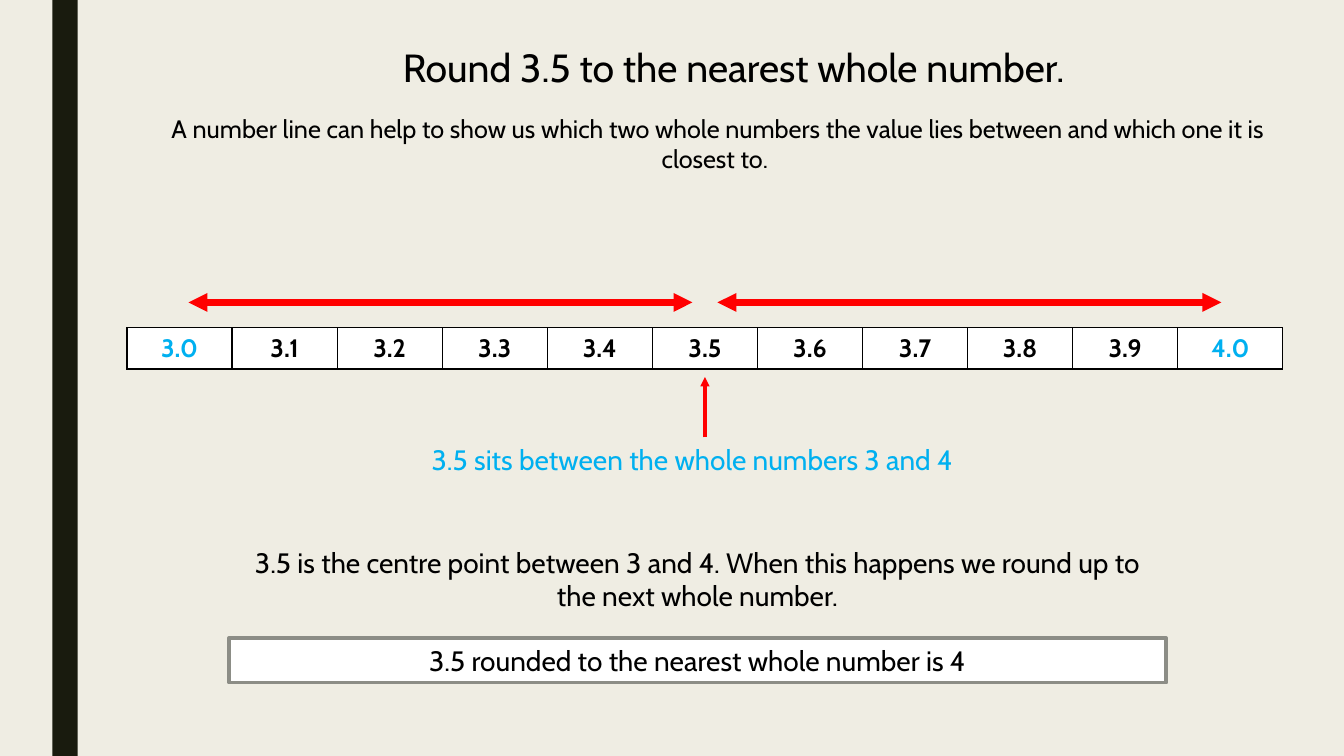
from pptx import Presentation
from pptx.dml.color import RGBColor
from pptx.enum.shapes import MSO_CONNECTOR, MSO_SHAPE
from pptx.enum.text import MSO_ANCHOR, PP_ALIGN
from pptx.oxml.ns import qn
from pptx.util import Cm, Pt
from lxml.etree import SubElement

BLACK = RGBColor(0x00, 0x00, 0x00)
WHITE = RGBColor(0xFF, 0xFF, 0xFF)
BLUE = RGBColor(0x00, 0xB0, 0xF0)
RED = RGBColor(0xFF, 0x00, 0x00)
CREAM = RGBColor(0xEF, 0xED, 0xE3)
DARK = RGBColor(0x19, 0x1B, 0x0E)
GREY = RGBColor(0x8C, 0x8D, 0x86)


def write(frame, text, size, color=BLACK, bold=False):
    para = frame.paragraphs[0]
    para.text = text
    para.alignment = PP_ALIGN.CENTER
    font = para.font
    font.name = "Cabin"
    font.size = Pt(size)
    font.bold = bold
    font.color.rgb = color


def add_text(slide, box, text, size, color=BLACK, wrap=True):
    frame = slide.shapes.add_textbox(*map(Cm, box)).text_frame
    frame.word_wrap = wrap
    write(frame, text, size, color)


def add_rect(slide, box, fill, edge=None):
    rect = slide.shapes.add_shape(MSO_SHAPE.RECTANGLE, *map(Cm, box))
    rect.shadow.inherit = False
    rect.fill.solid()
    rect.fill.fore_color.rgb = fill
    if edge is None:
        rect.line.fill.background()
    else:
        rect.line.color.rgb = edge
        rect.line.width = Pt(2.75)
    return rect


def add_arrow(slide, start, end, width, ends):
    arrow = slide.shapes.add_connector(
        MSO_CONNECTOR.STRAIGHT, *map(Cm, start + end))
    arrow.line.color.rgb = RED
    arrow.line.width = Pt(width)
    line = arrow.line._get_or_add_ln()
    for name in ends:
        SubElement(line, qn(name), type="triangle")
    SubElement(arrow._element.spPr, qn("a:effectLst"))


def add_border(cell):
    props = cell._tc.get_or_add_tcPr()
    for at, side in enumerate(("a:lnL", "a:lnR", "a:lnT", "a:lnB")):
        line = props.makeelement(qn(side), {"w": str(Pt(1))})
        fill = SubElement(line, qn("a:solidFill"))
        SubElement(fill, qn("a:srgbClr"), val=str(BLACK))
        props.insert(at, line)


def add_scale(slide, box):
    left, top, width, height = box
    count = 11
    table = slide.shapes.add_table(1, count, *map(Cm, box)).table
    table.rows[0].height = Cm(height)
    for i in range(count):
        table.columns[i].width = Cm(width / count)
        cell = table.cell(0, i)
        cell.fill.solid()
        cell.fill.fore_color.rgb = WHITE
        cell.vertical_anchor = MSO_ANCHOR.TOP
        color = BLUE if i in (0, count - 1) else BLACK
        write(cell.text_frame, f"{3 + i / 10:.1f}", 18, color, True)
        add_border(cell)

    span, level = 12.7, top - 0.64
    for start in (left + 1.55, left + 14.88):
        add_arrow(slide, (start, level), (start + span, level), 4.5,
                  ("a:headEnd", "a:tailEnd"))
    middle = left + width / 2
    base = top + height
    add_arrow(slide, (middle, base + 1.72), (middle, base + 0.2), 2.25,
              ("a:tailEnd",))
    add_text(slide, (left + 2.44, base + 1.72, 23.62, 1.12),
             "3.5 sits between the whole numbers 3 and 4", 20, BLUE)


def add_header(slide, box):
    left, top, width, height = box
    add_text(slide, (left + 6.53, top, 17.73, 1.45),
             "Round 3.5 to the nearest whole number. ", 28, wrap=False)
    add_text(slide, (left, top + 1.75, width, height - 1.75),
             "A number line can help to show us which two whole numbers the "
             "value lies between and which one it is closest to. ", 18)


def add_result(slide, box):
    left, top, width, height = box
    add_text(slide, (left, top, width, 1.96),
             "3.5 is the centre point between 3 and 4. When this happens we "
             "round up to the next whole number.", 20)
    rect = add_rect(slide, (left, top + height - 1.12, width, 1.12),
                    WHITE, GREY)
    rect.text_frame.word_wrap = True
    write(rect.text_frame,
          "3.5 rounded to the nearest whole number is 4", 20)


def main():
    deck = Presentation()
    deck.slide_width = Cm(33.87)
    deck.slide_height = Cm(19.05)
    slide = deck.slides.add_slide(deck.slide_layouts[6])
    slide.background.fill.solid()
    slide.background.fill.fore_color.rgb = CREAM
    add_rect(slide, (1.32, 0, 0.64, 19.05), DARK)
    add_header(slide, (3.2, 0.97, 29.77, 3.55))
    add_scale(slide, (3.2, 8.26, 29.13, 1.04))
    add_result(slide, (5.77, 13.61, 23.62, 3.59))
    deck.save("out.pptx")


if __name__ == "__main__":
    main()
